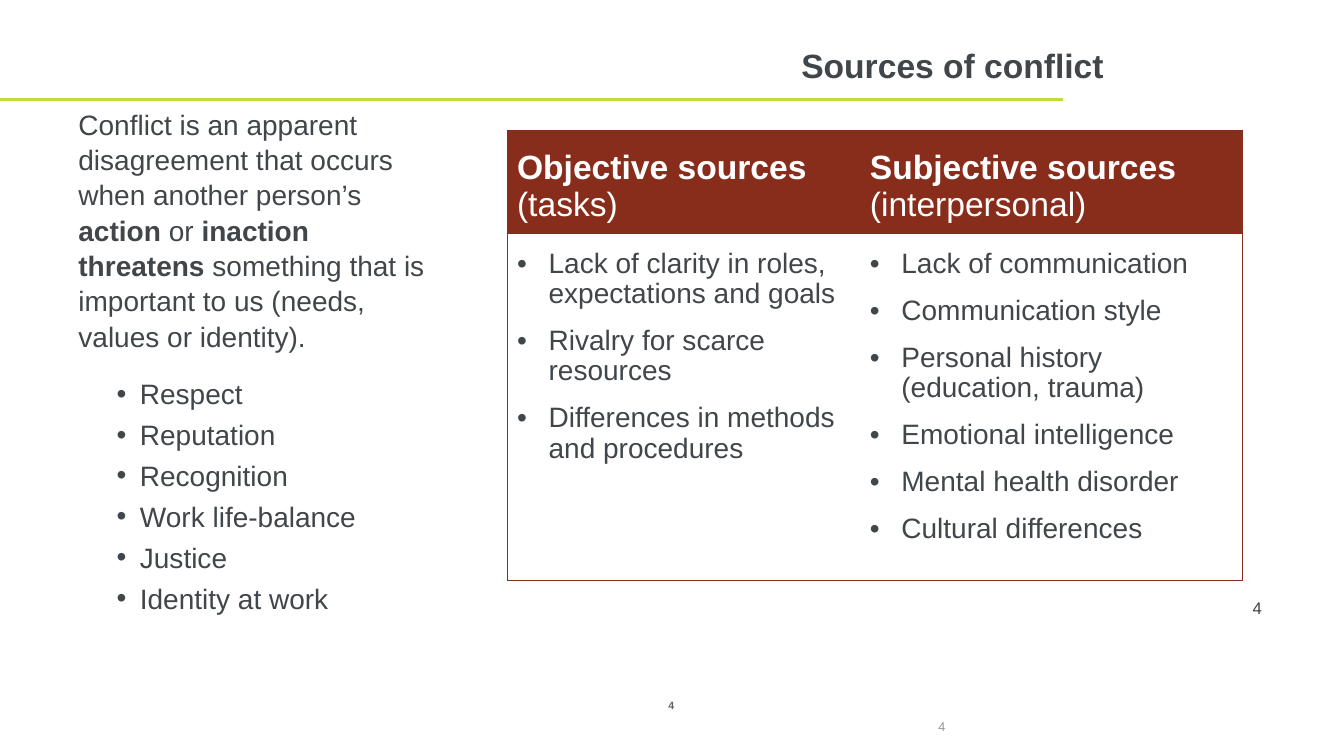
from lxml.etree import SubElement
from pptx import Presentation
from pptx.dml.color import RGBColor
from pptx.enum.shapes import MSO_CONNECTOR
from pptx.enum.text import MSO_ANCHOR, MSO_AUTO_SIZE, PP_ALIGN
from pptx.oxml.ns import qn
from pptx.util import Pt

TITLE = "Sources of conflict"
DEFINITION = [
    ("Conflict is an apparent disagreement that occurs when another person’s ", False),
    ("action", True),
    (" or ", False),
    ("inaction threatens", True),
    (" something that is important to us (needs, values or identity).", False),
]
NEEDS = ["Respect", "Reputation", "Recognition", "Work life-balance", "Justice", "Identity at work"]
SOURCES = [
    {"name": "Objective sources", "kind": "(tasks)", "width": 252, "edge": "L",
     "items": ["Lack of clarity in roles, expectations and goals",
               "Rivalry for scarce resources",
               "Differences in methods and procedures"]},
    {"name": "Subjective sources", "kind": "(interpersonal)", "width": 273.6, "edge": "R",
     "items": ["Lack of communication", "Communication style",
               "Personal history (education, trauma)", "Emotional intelligence",
               "Mental health disorder", "Cultural differences"]},
]
ROW_HEIGHTS = [74.16, 247.68]
PAGE_NUMBERS = [
    {"box": (460.8, 495.36, 37.44, 17.28), "size": 7.5, "color": "606060", "bold": True,
     "align": PP_ALIGN.CENTER, "anchor": MSO_ANCHOR.MIDDLE},
    {"box": (887.76, 423.36, 62.64, 21.6), "size": 12, "color": "3E4248", "bold": False,
     "align": PP_ALIGN.LEFT, "anchor": MSO_ANCHOR.TOP},
    {"box": (646.56, 513.36, 28.8, 15.84), "size": 9, "color": "929395", "bold": False,
     "align": PP_ALIGN.RIGHT, "anchor": MSO_ANCHOR.TOP, "margin": 0},
]
TEXT, MAROON, LIME, WHITE = "40464A", "882D1C", "C3D941", "FFFFFF"


def color(value):
    return RGBColor.from_string(value)


def apply(target, values):
    for name, value in values.items():
        setattr(target, name, value)


def add_run(paragraph, text, size, hex_color, bold=False):
    run = paragraph.add_run()
    run.text = text
    apply(run.font, {"name": "Arial", "size": Pt(size), "bold": bold})
    run.font.color.rgb = color(hex_color)


def add_bullet(paragraph, indent, hanging):
    properties = paragraph._p.get_or_add_pPr()
    properties.set("marL", str(Pt(indent)))
    properties.set("indent", str(-Pt(hanging)))
    SubElement(properties, qn("a:buFont"), typeface="Arial")
    SubElement(properties, qn("a:buChar"), char="•")


def next_paragraph(frame, index):
    return frame.add_paragraph() if index else frame.paragraphs[0]


def add_text_box(slide, box):
    frame = slide.shapes.add_textbox(*map(Pt, box)).text_frame
    frame.word_wrap = True
    return frame


def set_borders(cell, sides):
    properties = cell._tc.get_or_add_tcPr()
    for position, side in enumerate("LRTB"):
        border = properties.makeelement(qn(f"a:ln{side}"), {"w": str(Pt(0.75))})
        if side in sides:
            fill = SubElement(border, qn("a:solidFill"))
            SubElement(fill, qn("a:srgbClr"), val=MAROON)
        else:
            SubElement(border, qn("a:noFill"))
        properties.insert(position, border)


def format_cell(cell, fill, sides, anchor):
    apply(cell, {"margin_left": Pt(7.2), "margin_right": Pt(7.2), "margin_top": Pt(10.8),
                 "margin_bottom": Pt(3.6), "vertical_anchor": anchor})
    cell.fill.solid()
    cell.fill.fore_color.rgb = color(fill)
    set_borders(cell, sides)


def add_title(slide):
    title = slide.shapes.title
    apply(title, dict(zip(("left", "top", "width", "height"), map(Pt, (163.44, 28.8, 632.16, 43.2)))))
    apply(title.text_frame, {"vertical_anchor": MSO_ANCHOR.TOP, "auto_size": MSO_AUTO_SIZE.NONE,
                             "word_wrap": True})
    paragraph = title.text_frame.paragraphs[0]
    paragraph.alignment = PP_ALIGN.RIGHT
    add_run(paragraph, TITLE, 24, TEXT, True)


def add_rule(slide):
    rule = slide.shapes.add_connector(MSO_CONNECTOR.STRAIGHT, Pt(759.6), Pt(71.28), Pt(0), Pt(71.28))
    rule.line.color.rgb = color(LIME)
    rule.line.width = Pt(2)
    SubElement(rule._element.spPr, qn("a:effectLst"))


def add_definition(slide):
    frame = add_text_box(slide, (48.96, 72, 263.52, 396))
    paragraph = frame.paragraphs[0]
    apply(paragraph, {"space_after": Pt(12), "line_spacing": 1.05})
    for text, bold in DEFINITION:
        add_run(paragraph, text, 20, TEXT, bold)
    for need in NEEDS:
        paragraph = frame.add_paragraph()
        apply(paragraph, {"level": 1, "space_before": Pt(4), "line_spacing": 1.05})
        add_bullet(paragraph, 43.92, 16.56)
        add_run(paragraph, need, 20, TEXT)


def add_sources(slide):
    width = sum(source["width"] for source in SOURCES)
    table = slide.shapes.add_table(len(ROW_HEIGHTS), len(SOURCES), Pt(362.16), Pt(92.88),
                                   Pt(width), Pt(sum(ROW_HEIGHTS))).table
    for row, height in zip(table.rows, ROW_HEIGHTS):
        row.height = Pt(height)
    for index, source in enumerate(SOURCES):
        table.columns[index].width = Pt(source["width"])
        header, body = table.cell(0, index), table.cell(1, index)
        format_cell(header, MAROON, "TB" + source["edge"], MSO_ANCHOR.MIDDLE)
        format_cell(body, WHITE, "TB" + source["edge"], MSO_ANCHOR.TOP)
        for line, (text, bold) in enumerate([(source["name"], True), (source["kind"], False)]):
            paragraph = next_paragraph(header.text_frame, line)
            paragraph.line_spacing = 0.97
            add_run(paragraph, text, 24, WHITE, bold)
        for line, item in enumerate(source["items"]):
            paragraph = next_paragraph(body.text_frame, line)
            apply(paragraph, {"space_after": Pt(12), "line_spacing": 0.97})
            add_bullet(paragraph, 22.5, 22.5)
            add_run(paragraph, item, 20, TEXT)


def add_page_numbers(slide):
    for number in PAGE_NUMBERS:
        frame = add_text_box(slide, number["box"])
        frame.vertical_anchor = number["anchor"]
        if "margin" in number:
            sides = ("margin_left", "margin_top", "margin_right", "margin_bottom")
            apply(frame, dict.fromkeys(sides, Pt(number["margin"])))
        paragraph = frame.paragraphs[0]
        paragraph.alignment = number["align"]
        add_run(paragraph, "4", number["size"], number["color"], number["bold"])


def main():
    presentation = Presentation()
    apply(presentation, {"slide_width": Pt(960), "slide_height": Pt(540)})
    slide = presentation.slides.add_slide(presentation.slide_layouts[5])
    add_rule(slide)
    add_title(slide)
    add_definition(slide)
    add_sources(slide)
    add_page_numbers(slide)
    presentation.save("out.pptx")


if __name__ == "__main__":
    main()
